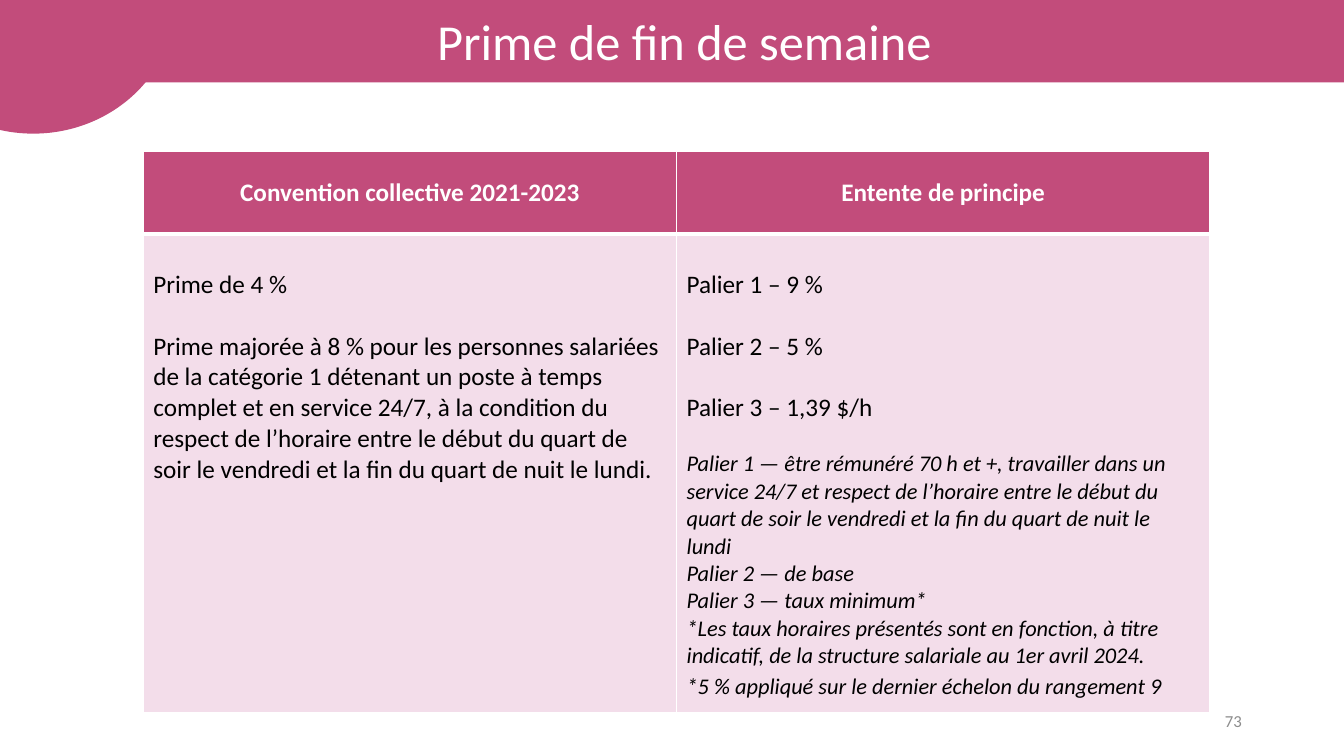
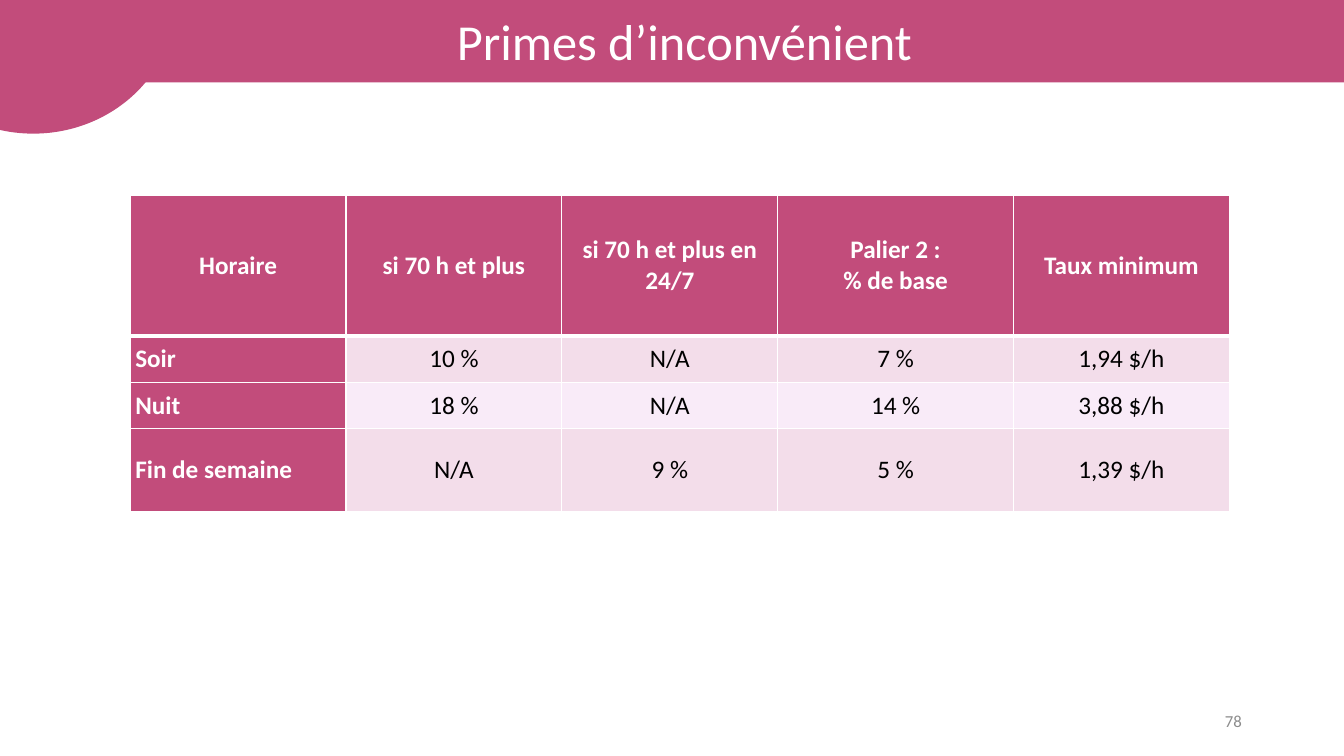
from dataclasses import dataclass

from lxml.etree import SubElement
from pptx import Presentation
from pptx.dml.color import RGBColor
from pptx.enum.shapes import MSO_SHAPE
from pptx.enum.text import MSO_ANCHOR, PP_ALIGN
from pptx.oxml.ns import qn
from pptx.util import Cm, Pt


@dataclass(frozen=True)
class Theme:
    font: str = "Calibri"
    pink: RGBColor = RGBColor(0xC2, 0x4C, 0x7B)
    pale: RGBColor = RGBColor(0xF3, 0xDD, 0xEA)
    paler: RGBColor = RGBColor(0xF9, 0xEB, 0xF8)
    white: RGBColor = RGBColor(0xFF, 0xFF, 0xFF)
    black: RGBColor = RGBColor(0, 0, 0)
    grey: RGBColor = RGBColor(0x8C, 0x8C, 0x8C)
    title: int = 36
    body: int = 18
    note: int = 16
    number: int = 12


theme = Theme()


def add_text(paragraph, text, size, color, align=PP_ALIGN.LEFT, bold=False, italic=False):
    paragraph.alignment = align
    for index, line in enumerate(text.split("\n")):
        if index:
            paragraph.add_line_break()
        run = paragraph.add_run()
        run.text = line
        run.font.name = theme.font
        run.font.size = Pt(size)
        run.font.color.rgb = color
        run.font.bold = bold
        run.font.italic = italic


def style_cell(cell, fill, top=1, bottom=1):
    properties = cell._tc.get_or_add_tcPr()
    for side, width in (("L", 1), ("R", 1), ("T", top), ("B", bottom)):
        border = SubElement(properties, qn(f"a:ln{side}"), w=str(Pt(width)))
        solid = SubElement(border, qn("a:solidFill"))
        SubElement(solid, qn("a:srgbClr"), val=str(theme.white))
    cell.fill.solid()
    cell.fill.fore_color.rgb = fill
    cell.vertical_anchor = MSO_ANCHOR.MIDDLE


presentation = Presentation()
presentation.slide_width = Cm(33.87)
presentation.slide_height = Cm(19.05)

# Title, page number, table corner, column widths, row heights, headings
pages = [
    ("Prime de fin de semaine", "73", (3.61, 3.81), [13.44] * 2, [2.08, 12.07],
     ["Convention collective 2021-2023", "Entente de principe"]),
    ("Primes d’inconvénient", "78", (3.28, 4.93),
     [5.44, 5.44, 5.44, 5.94, 5.44], [3.53, 1.17, 1.17, 2.08],
     ["Horaire", "si 70 h et plus", "si 70 h et plus en 24/7",
      "Palier 2 :\n% de base", "Taux minimum"]),
]

tables = []
for title, number, (left, top), widths, heights, headings in pages:
    slide = presentation.slides.add_slide(presentation.slide_layouts[6])

    # Title band and corner disc
    band = slide.shapes.add_shape(
        MSO_SHAPE.ROUNDED_RECTANGLE, 0, 0, Cm(34.5), Cm(2.06))
    disc = slide.shapes.add_shape(
        MSO_SHAPE.OVAL, Cm(-2.74), Cm(-3.38), Cm(7.16), Cm(6.73))
    for shape in (band, disc):
        shape.shadow.inherit = False
        shape.fill.solid()
        shape.fill.fore_color.rgb = theme.pink
        shape.line.color.rgb = theme.pink
        shape.line.width = Pt(1)
    band.text_frame.vertical_anchor = MSO_ANCHOR.MIDDLE
    add_text(band.text_frame.paragraphs[0], title, theme.title, theme.white,
             PP_ALIGN.CENTER)

    # Page number
    footer = slide.shapes.add_textbox(Cm(23.93), Cm(17.65), Cm(7.62), Cm(1.02))
    footer.text_frame.word_wrap = True
    footer.text_frame.vertical_anchor = MSO_ANCHOR.MIDDLE
    add_text(footer.text_frame.paragraphs[0], number, theme.number, theme.grey,
             PP_ALIGN.RIGHT)

    # Table grid and heading row
    table = slide.shapes.add_table(
        len(heights), len(widths), Cm(left), Cm(top),
        Cm(sum(widths)), Cm(sum(heights))).table
    table.horz_banding = False
    for column, width in zip(table.columns, widths):
        column.width = Cm(width)
    for row, height in zip(table.rows, heights):
        row.height = Cm(height)
    for cell, heading in zip(table.rows[0].cells, headings):
        style_cell(cell, theme.pink, bottom=3)
        add_text(cell.text_frame.paragraphs[0], heading, theme.body, theme.white,
                 PP_ALIGN.CENTER, bold=True)
    tables.append(table)

weekend_table, premium_table = tables

# Weekend premium: text, space before in points, is a note
weekend_cells = [
    [("Prime de 4 %", 0, False),
     ("Prime majorée à 8 % pour les personnes salariées de la catégorie 1 "
      "détenant un poste à temps complet et en service 24/7, à la condition du "
      "respect de l’horaire entre le début du quart de soir le vendredi et la fin "
      "du quart de nuit le lundi.", 22, False)],
    [("Palier 1 – 9 %", 0, False),
     ("Palier 2 – 5 %", 22, False),
     ("Palier 3 – 1,39 $/h", 22, False),
     ("Palier 1 — être rémunéré 70 h et +, travailler dans un service 24/7 et "
      "respect de l’horaire entre le début du quart de soir le vendredi et la fin "
      "du quart de nuit le lundi", 19.5, True),
     ("Palier 2 — de base", 0, True),
     ("Palier 3 — taux minimum*", 0, True),
     ("*Les taux horaires présentés sont en fonction, à titre indicatif, de la "
      "structure salariale au 1er avril 2024.", 0, True),
     ("*5 % appliqué sur le dernier échelon du rangement 9", 2.5, True)],
]
for cell, entries in zip(weekend_table.rows[1].cells, weekend_cells):
    style_cell(cell, theme.pale, top=3)
    cell.vertical_anchor = MSO_ANCHOR.TOP
    cell.margin_top = Cm(0.9)
    for index, (text, space, is_note) in enumerate(entries):
        frame = cell.text_frame
        paragraph = frame.add_paragraph() if index else frame.paragraphs[0]
        if space:
            paragraph.space_before = Pt(space)
        add_text(paragraph, text, theme.note if is_note else theme.body,
                 theme.black, italic=is_note)

# Inconvenience premiums by shift
premium_rows = [
    ["Soir", "10 %", "N/A", "7 %", "1,94 $/h"],
    ["Nuit", "18 %", "N/A", "14 %", "3,88 $/h"],
    ["Fin de semaine", "N/A", "9 %", "5 %", "1,39 $/h"],
]
for row_index, values in enumerate(premium_rows, start=1):
    row_fill = theme.pale if row_index % 2 else theme.paler
    for column_index, value in enumerate(values):
        cell = premium_table.cell(row_index, column_index)
        is_label = column_index == 0
        style_cell(cell, theme.pink if is_label else row_fill,
                   top=3 if row_index == 1 else 1)
        add_text(cell.text_frame.paragraphs[0], value, theme.body,
                 theme.white if is_label else theme.black,
                 PP_ALIGN.LEFT if is_label else PP_ALIGN.CENTER, bold=is_label)
for cell in premium_table.iter_cells():
    cell.margin_left = cell.margin_right = Cm(0.13)
    cell.margin_top = cell.margin_bottom = 0

presentation.save("out.pptx")
